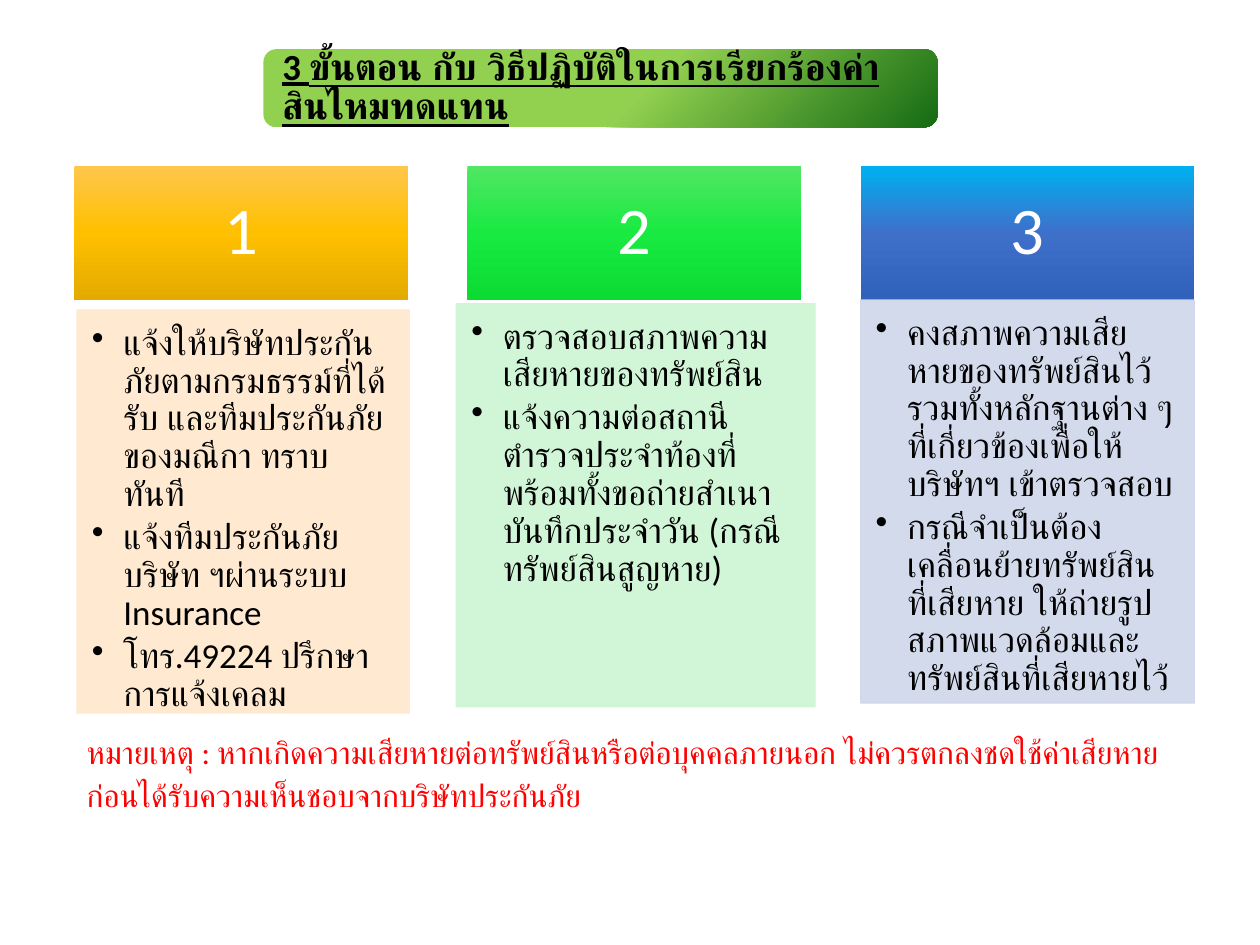
import pptx
import pptx.util
import pptx.dml.color
import pptx.enum.shapes
import pptx.enum.text
import pptx.oxml.ns
import lxml.etree

Shape = pptx.enum.shapes.MSO_SHAPE
Anchor = pptx.enum.text.MSO_ANCHOR
Align = pptx.enum.text.PP_ALIGN
qn = pptx.oxml.ns.qn

FIRST_LEFT, COLUMN_STEP, COLUMN_WIDTH = 5.9, 31.2, 26.5
HEADER_TOP, HEADER_HEIGHT, BODY_HEIGHT = 17.6, 14.13, 42.67

STEPS = [
    dict(stops=[(0, "FFC64B"), (50, "FFC000"), (100, "E3AB00")],
         tint="FFE8CC", place=(6.1, 32.8, 26.4),
         items=["แจ้งให้บริษัทประกันภัยตามกรมธรรม์ที่ได้รับ และทีมประกันภัยของมณีกา ทราบทันที",
                "แจ้งทีมประกันภัยบริษัท ฯผ่านระบบ Insurance",
                "โทร.49224 ปรึกษาการแจ้งเคลม"]),
    dict(stops=[(0, "51E663"), (50, "19EA42"), (100, "0CDB34")],
         tint="CCF6D3", place=(36.2, 32.13, 28.5),
         items=["ตรวจสอบสภาพความเสียหายของทรัพย์สิน",
                "แจ้งความต่อสถานีตำรวจประจำท้องที่ พร้อมทั้งขอถ่ายสำเนาบันทึกประจำวัน (กรณีทรัพย์สินสูญหาย)"]),
    dict(stops=[(0, "00B0F0"), (50, "3E70CA"), (100, "3062BB")],
         tint="CFD6EA", place=(68.3, 31.73, 26.5),
         items=["คงสภาพความเสียหายของทรัพย์สินไว้ รวมทั้งหลักฐานต่าง ๆ ที่เกี่ยวข้องเพื่อให้บริษัทฯ เข้าตรวจสอบ",
                "กรณีจำเป็นต้องเคลื่อนย้ายทรัพย์สินที่เสียหาย ให้ถ่ายรูปสภาพแวดล้อมและทรัพย์สินที่เสียหายไว้"]),
]


def color(value):
    return pptx.dml.color.RGBColor.from_string(value)


class Page:
    font = "Calibri"

    def __init__(self, deck):
        self.deck = deck
        self.slide = deck.slides.add_slide(deck.slide_layouts[6])

    def area(self, left, top, width, height):
        across, down = self.deck.slide_width / 100, self.deck.slide_height / 100
        return [round(size) for size in (left * across, top * down, width * across, height * down)]

    def panel(self, kind, place):
        box = self.slide.shapes.add_shape(kind, *self.area(*place))
        box.shadow.inherit = False
        box.line.fill.background()
        return box

    def gradient_panel(self, kind, place, stops, angle):
        box = self.panel(kind, place)
        box.fill.gradient()
        box.fill.gradient_angle = 360 - angle
        stop_list = box._element.spPr.find(qn("a:gradFill")).find(qn("a:gsLst"))
        for stop in list(stop_list):
            stop_list.remove(stop)
        for position, value in stops:
            stop = lxml.etree.SubElement(stop_list, qn("a:gs"), pos=str(position * 1000))
            lxml.etree.SubElement(stop, qn("a:srgbClr"), val=value)
        return box

    def tinted_panel(self, place, tint):
        box = self.panel(Shape.RECTANGLE, place)
        for fill in (box.fill, box.line.fill):
            fill.solid()
            fill.fore_color.rgb = color(tint)
        box.line.width = pptx.util.Pt(0.5)
        for solid in box._element.spPr.iter(qn("a:solidFill")):
            lxml.etree.SubElement(solid[0], qn("a:alpha"), val="90000")
        return box

    def set_text(self, box, lines, size, ink, align=Align.LEFT, anchor=Anchor.TOP,
                 insets=(0.1, 0.05, 0.1, 0.05), spacing=0.9, after=0, bullets=False):
        frame = box.text_frame
        frame.word_wrap = True
        frame.vertical_anchor = anchor
        (frame.margin_left, frame.margin_top,
         frame.margin_right, frame.margin_bottom) = map(pptx.util.Inches, insets)
        frame.text = "\n".join(lines)
        for para in frame.paragraphs:
            para.alignment = align
            para.line_spacing = spacing
            para.space_after = pptx.util.Pt(after)
            if bullets:
                self.bullet(para)
            for span in para.runs:
                span.font.name = self.font
                span.font.size = pptx.util.Pt(size)
                span.font.color.rgb = color(ink)
        return frame

    def bullet(self, para):
        props = para._p.get_or_add_pPr()
        indent = pptx.util.Inches(0.25)
        props.set("marL", str(indent))
        props.set("indent", str(-indent))
        lxml.etree.SubElement(props, qn("a:buChar"), char="•")

    def title(self, text):
        box = self.gradient_panel(Shape.ROUNDED_RECTANGLE, (20.9, 5.2, 53.5, 8.27),
                                  [(0, "92D050"), (56, "92D050"), (100, "156B13")], 45)
        frame = self.set_text(box, [text], 21, "000000", anchor=Anchor.MIDDLE,
                              insets=(0.12, 0.12, 0.12, 0.12))
        for span in frame.paragraphs[0].runs:
            span.font.bold = True
            span.font.underline = True

    def step(self, index, stops, tint, place, items):
        left = FIRST_LEFT + index * COLUMN_STEP
        header = self.gradient_panel(Shape.RECTANGLE,
                                     (left, HEADER_TOP, COLUMN_WIDTH, HEADER_HEIGHT), stops, 90)
        self.set_text(header, [str(index + 1)], 38, "FFFFFF", Align.CENTER, Anchor.MIDDLE,
                      (0.3, 0.17, 0.3, 0.17))
        body = self.tinted_panel((*place, BODY_HEIGHT), tint)
        self.set_text(body, items, 20, "000000", insets=(0.12, 0.12, 0.16, 0.17),
                      after=3, bullets=True)

    def note(self, text):
        box = self.slide.shapes.add_textbox(*self.area(5.9, 76.27, 89, 10.67))
        self.set_text(box, [text], 18, "FF0000", spacing=1.15)


def main():
    deck = pptx.Presentation()
    deck.slide_width = pptx.util.Inches(10)
    deck.slide_height = pptx.util.Inches(7.5)
    page = Page(deck)
    page.title("3 ขั้นตอน กับ วิธีปฏิบัติในการเรียกร้องค่าสินไหมทดแทน")
    for index, step in enumerate(STEPS):
        page.step(index, **step)
    page.note("หมายเหตุ : หากเกิดความเสียหายต่อทรัพย์สินหรือต่อบุคคลภายนอก "
              "ไม่ควรตกลงชดใช้ค่าเสียหายก่อนได้รับความเห็นชอบจากบริษัทประกันภัย")
    deck.save("out.pptx")


if __name__ == "__main__":
    main()
